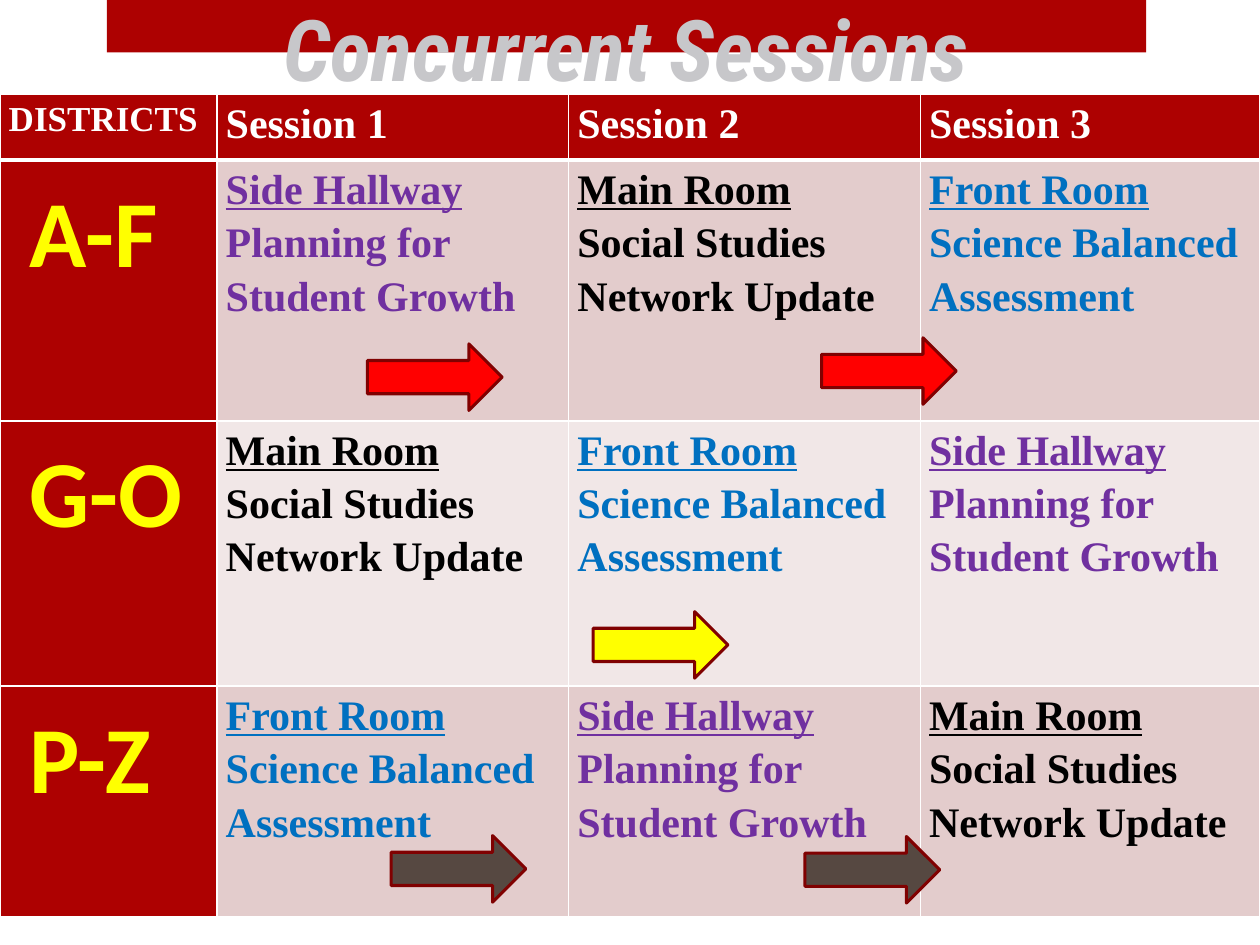
from typing import NamedTuple

from lxml.etree import SubElement
from pptx import Presentation
from pptx.dml.color import RGBColor
from pptx.enum.shapes import MSO_SHAPE
from pptx.enum.text import MSO_ANCHOR, PP_ALIGN
from pptx.oxml import parse_xml
from pptx.oxml.ns import nsdecls, qn
from pptx.util import Pt

COLORS = {
    "brand": "AD0101", "title": "C7C7CA", "white": "FFFFFF", "yellow": "FFFF00",
    "red": "FF0000", "brown": "564841", "outline": "800101",
    "purple": "7030A0", "black": "000000", "blue": "0070C0",
    "band_dark": "E3CCCC", "band_light": "F1E7E7",
}
SERIF = "Times New Roman"


class Session(NamedTuple):
    room: str
    topic: str
    color: str


class Arrow(NamedTuple):
    left: float
    top: float
    color: str


PLANNING = Session("Side Hallway", "Planning for Student Growth", "purple")
SOCIAL = Session("Main Room", "Social Studies Network Update", "black")
SCIENCE = Session("Front Room", "Science Balanced Assessment", "blue")

HEADERS = ["DISTRICTS", "Session 1", "Session 2", "Session 3"]
SCHEDULE = {
    "A-F": [PLANNING, SOCIAL, SCIENCE],
    "G-O": [SOCIAL, SCIENCE, PLANNING],
    "P-Z": [SCIENCE, PLANNING, SOCIAL],
}
COLUMN_WIDTHS = [124, 201, 201, 194]
ROW_HEIGHTS = [37.5, 149, 151.5, 132]
TABLE_TOP = 54

ARROWS = [
    Arrow(210, 196.5, "red"), Arrow(469.5, 193, "red"),
    Arrow(339, 349.5, "yellow"),
    Arrow(223.5, 477.5, "brown"), Arrow(460, 478, "brown"),
]


def rgb(name: str) -> RGBColor:
    return RGBColor.from_string(COLORS[name])


def style(paragraph, font_name: str, size: float, color: str) -> None:
    font = paragraph.font
    font.name, font.size, font.bold = font_name, Pt(size), True
    font.color.rgb = rgb(color)


def add_filled_shape(slide, kind, left: float, top: float,
                     width: float, height: float, color: str):
    shape = slide.shapes.add_shape(kind, Pt(left), Pt(top), Pt(width), Pt(height))
    shape.shadow.inherit = False
    shape.fill.solid()
    shape.fill.fore_color.rgb = rgb(color)
    shape.line.fill.background()
    return shape


def add_title(slide) -> None:
    box = slide.shapes.add_textbox(Pt(42), Pt(0), Pt(632), Pt(60))
    frame = box.text_frame
    frame.word_wrap = True
    frame.vertical_anchor = MSO_ANCHOR.BOTTOM
    paragraph = frame.paragraphs[0]
    paragraph.text = "Concurrent Sessions"
    paragraph.alignment = PP_ALIGN.CENTER
    style(paragraph, "Roboto Condensed", 48.6, "title")
    paragraph.font.italic = True


def set_borders(cell, top: float, bottom: float) -> None:
    properties = cell._tc.get_or_add_tcPr()
    widths = {"lnL": 1, "lnR": 1, "lnT": top, "lnB": bottom}
    for position, (tag, width) in enumerate(widths.items()):
        line = parse_xml(f'<a:{tag} {nsdecls("a")} w="{Pt(width)}"/>')
        fill = SubElement(line, qn("a:solidFill"))
        SubElement(fill, qn("a:srgbClr"), val=COLORS["white"])
        properties.insert(position, line)


def fill_cell(cell, lines: list[str], color: str, font_name: str, size: float,
              text_color: str, indent: float = 0) -> None:
    cell.fill.solid()
    cell.fill.fore_color.rgb = rgb(color)
    cell.margin_left, cell.margin_right = Pt(5 + indent), Pt(5)
    cell.margin_top = cell.margin_bottom = Pt(0)
    cell.text = "\n".join(lines)
    for paragraph in cell.text_frame.paragraphs:
        paragraph.line_spacing = 1.15
        style(paragraph, font_name, size, text_color)


def add_schedule(slide) -> None:
    table = slide.shapes.add_table(
        len(ROW_HEIGHTS), len(COLUMN_WIDTHS), Pt(0), Pt(TABLE_TOP),
        Pt(sum(COLUMN_WIDTHS)), Pt(sum(ROW_HEIGHTS))).table
    for column, width in zip(table.columns, COLUMN_WIDTHS):
        column.width = Pt(width)
    for row, height in zip(table.rows, ROW_HEIGHTS):
        row.height = Pt(height)

    # Header row
    for index, header in enumerate(HEADERS):
        cell = table.cell(0, index)
        fill_cell(cell, [header], "brand", SERIF, 24 if index else 20, "white")
        set_borders(cell, 1, 3)

    # One row for each group of districts
    for row, (districts, sessions) in enumerate(SCHEDULE.items(), start=1):
        top = 3 if row == 1 else 1
        cell = table.cell(row, 0)
        fill_cell(cell, [districts], "brand", "Calibri", 54, "yellow", indent=12)
        set_borders(cell, top, 1)
        band = "band_dark" if row % 2 else "band_light"
        for column, session in enumerate(sessions, start=1):
            cell = table.cell(row, column)
            fill_cell(cell, [session.room, session.topic], band, SERIF, 24,
                      session.color)
            cell.text_frame.paragraphs[0].font.underline = True
            set_borders(cell, top, 1)


def add_arrow(slide, arrow: Arrow) -> None:
    shape = add_filled_shape(slide, MSO_SHAPE.RIGHT_ARROW, arrow.left, arrow.top,
                             77, 38, arrow.color)
    shape.line.color.rgb = rgb("outline")
    shape.line.width = Pt(1.75)


def main() -> None:
    presentation = Presentation()
    presentation.slide_width, presentation.slide_height = Pt(720), Pt(540)
    slide = presentation.slides.add_slide(presentation.slide_layouts[6])

    # Top band and title
    add_filled_shape(slide, MSO_SHAPE.RECTANGLE, 61, 0, 594, 30, "brand")
    add_title(slide)

    # Timetable, then the arrows over it
    add_schedule(slide)
    for arrow in ARROWS:
        add_arrow(slide, arrow)

    presentation.save("out.pptx")


if __name__ == "__main__":
    main()
